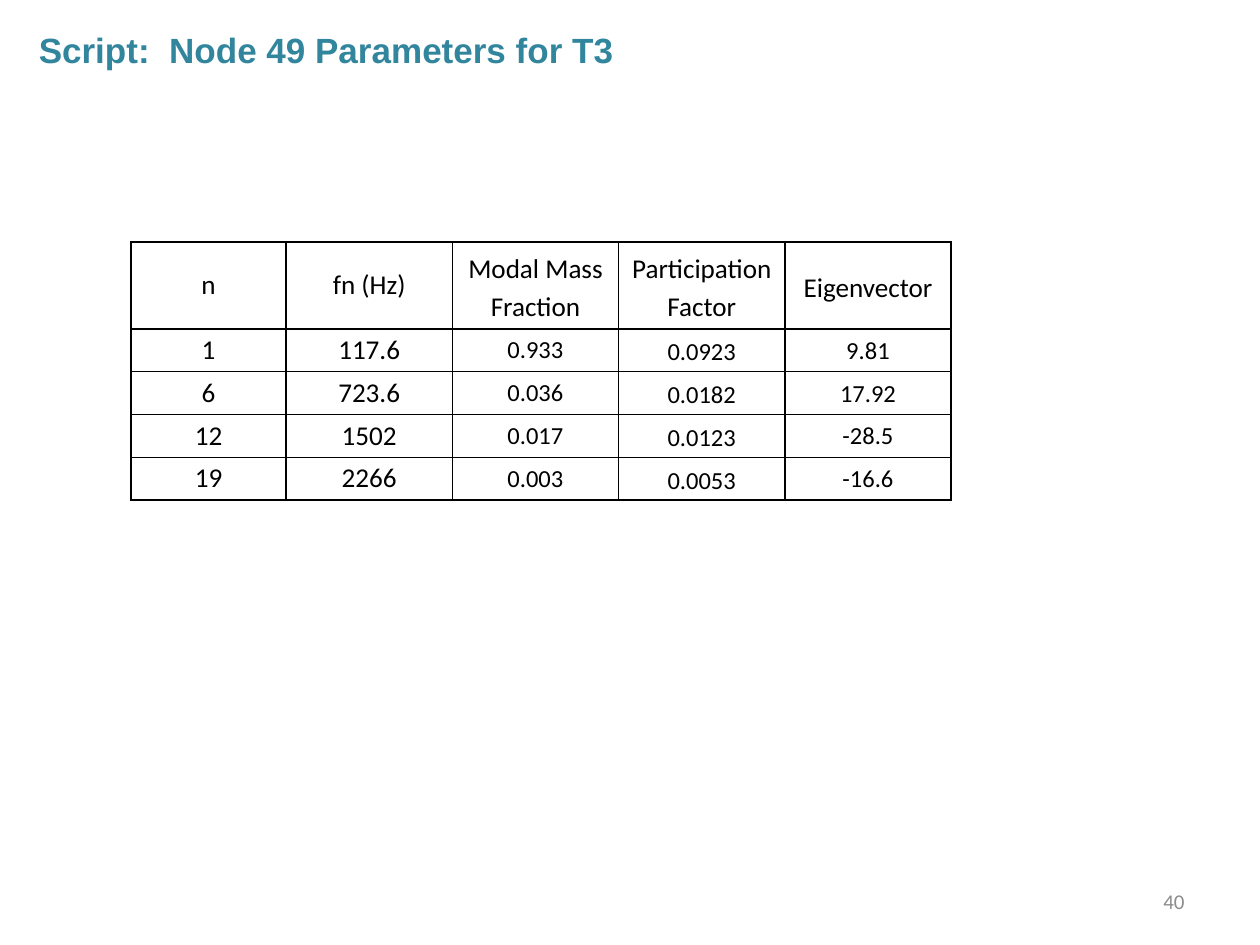
import pptx
import pptx.util
import pptx.dml.color
import pptx.enum.text
import pptx.oxml

INCH, PT = pptx.util.Inches, pptx.util.Pt
RGB = pptx.dml.color.RGBColor
ALIGN, ANCHOR = pptx.enum.text.PP_ALIGN, pptx.enum.text.MSO_ANCHOR
HUES = {"title": "31859C", "page": "8C8C8C", "ink": "000000", "paper": "FFFFFF"}
NS = "http://schemas.openxmlformats.org/drawingml/2006/main"


def write(frame, text, size, hue, font="Calibri", align=ALIGN.LEFT, bold=False):
    """Add one styled run to the first paragraph and return that paragraph."""
    para = frame.paragraphs[0]
    para.alignment = align
    run = para.add_run()
    run.text = text
    run.font.name, run.font.size, run.font.bold = font, PT(size), bold
    run.font.color.rgb = RGB.from_string(HUES[hue])
    return para


def frame_cell(cell):
    """Draw a thin line on all four sides of a cell."""
    props = cell._tc.get_or_add_tcPr()
    for place, side in enumerate("LRTB"):
        props.insert(place, pptx.oxml.parse_xml(
            f'<a:ln{side} xmlns:a="{NS}" w="{PT(1)}"><a:solidFill>'
            f'<a:srgbClr val="{HUES["ink"]}"/></a:solidFill></a:ln{side}>'))


deck = pptx.Presentation()
deck.slide_width, deck.slide_height = INCH(10), INCH(7.5)
slide = deck.slides.add_slide(deck.slide_layouts[6])

# Page number and title
page = slide.shapes.add_textbox(INCH(7.17), INCH(6.95), INCH(2.33), INCH(0.4)).text_frame
page.word_wrap = True
page.vertical_anchor = ANCHOR.MIDDLE
write(page, "40", 12, "page", align=ALIGN.RIGHT)

title = slide.shapes.add_textbox(INCH(0.21), INCH(0.18), INCH(8.17), INCH(0.44)).text_frame
title.word_wrap = True
title.auto_size = pptx.enum.text.MSO_AUTO_SIZE.SHAPE_TO_FIT_TEXT
line = write(title, "Script:  Node 49 Parameters for T3", 20, "title", "Arial", bold=True)
line.space_before = line.space_after = PT(2)

# Table of modal parameters
rows = [
    ["n", "fn (Hz)", "Modal Mass Fraction", "Participation Factor", "Eigenvector"],
    ["1", "117.6", "0.933", "0.0923", "9.81"],
    ["6", "723.6", "0.036", "0.0182", "17.92"],
    ["12", "1502", "0.017", "0.0123", "-28.5"],
    ["19", "2266", "0.003", "0.0053", "-16.6"],
]
table = slide.shapes.add_table(
    len(rows), len(rows[0]), INCH(1.04), INCH(1.92), INCH(6.5), INCH(2.04)).table
table.first_row = table.horz_banding = False
for c, col in enumerate(table.columns):
    col.width = INCH(1.32 if c else 1.23)

for r, row in enumerate(rows):
    head = r == 0
    table.rows[r].height = INCH(0.69 if head else 0.34)
    for c, text in enumerate(row):
        cell = table.cell(r, c)
        cell.fill.solid()
        cell.fill.fore_color.rgb = RGB.from_string(HUES["paper"])
        frame_cell(cell)
        tight = c == 4 and not head
        cell.margin_left = cell.margin_right = INCH(0.01 if tight else 0.07)
        cell.margin_top, cell.margin_bottom = INCH(0.01 if tight else 0), 0
        cell.vertical_anchor = ANCHOR.MIDDLE
        size = 15.5 if head or c < 2 else 14
        para = write(cell.text_frame, text, size, "ink", align=ALIGN.CENTER)
        if c == 3 or head and c > 1:
            para.line_spacing = 1.15

deck.save("out.pptx")
